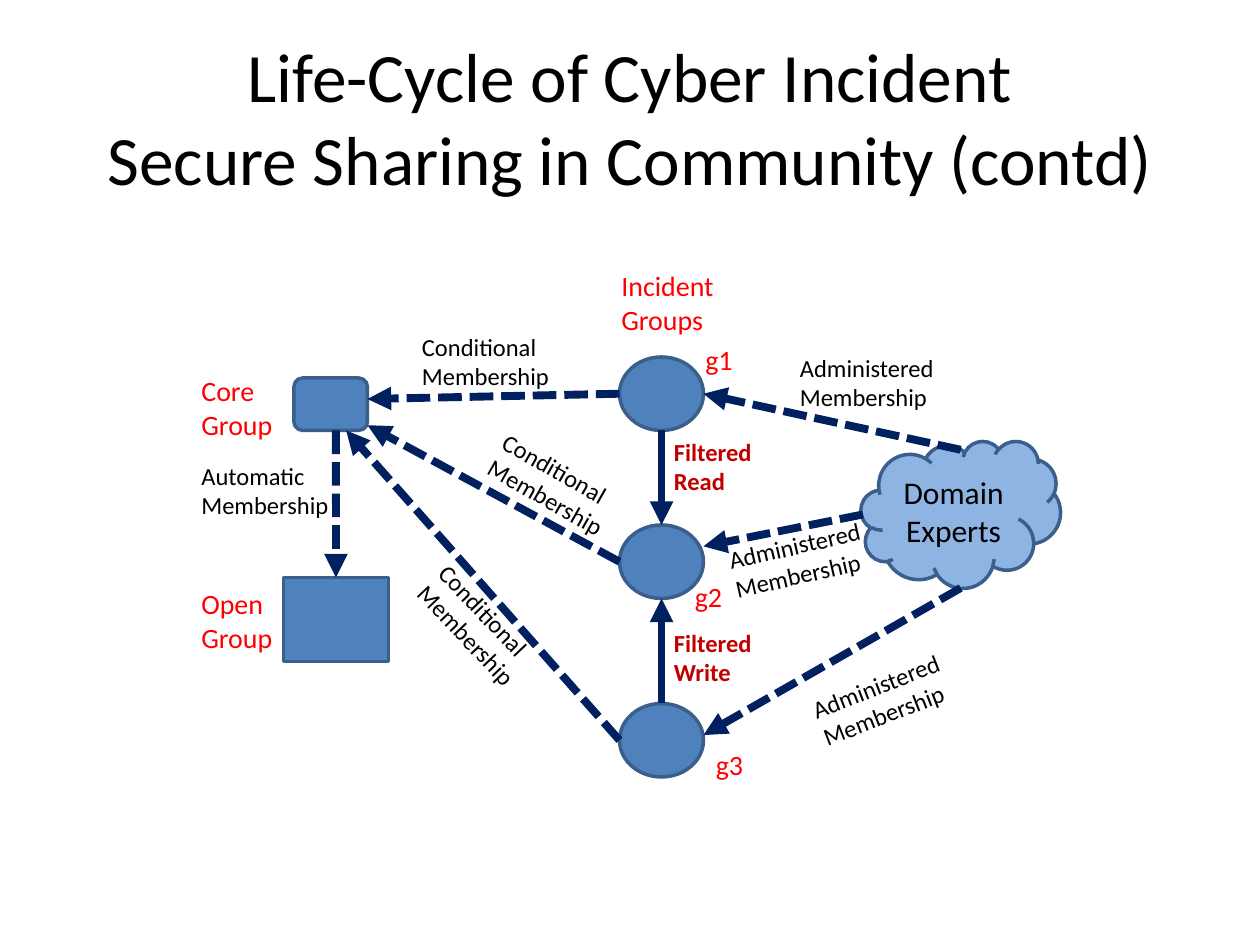
from lxml import etree
from pptx import Presentation
from pptx.dml.color import RGBColor
from pptx.enum.dml import MSO_LINE
from pptx.enum.shapes import MSO_CONNECTOR, MSO_SHAPE
from pptx.enum.text import MSO_ANCHOR, MSO_AUTO_SIZE, PP_ALIGN
from pptx.oxml.ns import qn
from pptx.util import Inches, Pt

RECT, ROUND = MSO_SHAPE.RECTANGLE, MSO_SHAPE.ROUNDED_RECTANGLE
OVAL, CLOUD = MSO_SHAPE.OVAL, MSO_SHAPE.CLOUD
STRAIGHT, DASH = MSO_CONNECTOR.STRAIGHT, MSO_LINE.SQUARE_DOT
CENTER, MIDDLE = PP_ALIGN.CENTER, MSO_ANCHOR.MIDDLE
FIXED = MSO_AUTO_SIZE.NONE

CELL = Inches(1) / 12  # the slide is 120 columns by 90 rows
FONT = "Calibri"
HUES = {"node": "4F81BD", "edge": "3A5F8C", "cloud": "8EB4E3", "arrow": "002060",
        "name": "FF0000", "filter": "C00000", "text": "000000"}


def hue(name):
    return RGBColor.from_string(HUES[name])


def place(box, x, y, w, h):
    """Turn cells counted from the corner of box into slide lengths."""
    return [round(n * CELL) for n in (box[0] + x, box[1] + y, w, h)]


def style(frame, size, color, bold=False, align=None):
    for para in frame.paragraphs:
        para.alignment = align
        for run in para.runs:
            run.font.name, run.font.size = FONT, Pt(size)
            run.font.bold, run.font.color.rgb = bold, hue(color)


def label(slide, box, text, x, y, w, h=6.8, size=14, color="text", bold=False, turn=0):
    area = slide.shapes.add_textbox(*place(box, x, y, w, h))
    area.rotation = turn
    area.text_frame.word_wrap = True
    area.text_frame.text = text
    style(area.text_frame, size, color, bold)


def name(slide, box, text, x, y, w, h=7.7):
    label(slide, box, text, x, y, w, h, 16, "name")


def node(slide, box, kind, x, y, w, h, fill="node"):
    shape = slide.shapes.add_shape(kind, *place(box, x, y, w, h))
    shape.shadow.inherit = False
    shape.fill.solid()
    shape.fill.fore_color.rgb = hue(fill)
    shape.line.color.rgb, shape.line.width = hue("edge"), Pt(2)
    return shape


def point(shape, across, down):
    """Find a point of the shape from shares of its width and height."""
    return (round(shape.left + across * shape.width),
            round(shape.top + down * shape.height))


def arrow(slide, start, end, dashed=True):
    link = slide.shapes.add_connector(STRAIGHT, *point(*start), *point(*end))
    link.line.color.rgb, link.line.width = hue("arrow"), Pt(4.5)
    if dashed:
        link.line.dash_style = DASH
    etree.SubElement(link.line._get_or_add_ln(), qn("a:tailEnd"), type="triangle")
    etree.SubElement(link._element.spPr, qn("a:effectLst"))
    return link


def heading(slide, box):
    title = slide.shapes.title
    title.left, title.top, title.width, title.height = place(box, 0, 0, *box[2:])
    frame = title.text_frame
    frame.text = "Life-Cycle of Cyber Incident\vSecure Sharing in Community (contd)"
    frame.auto_size, frame.vertical_anchor = FIXED, MIDDLE
    style(frame, 39.6, "text", align=CENTER)


def groups(slide, box):
    core = node(slide, box, ROUND, 10, 1, 7, 5)
    public = node(slide, box, RECT, 9, 20, 10, 8)
    name(slide, box, "Core Group", 0, 0, 10)
    name(slide, box, "Open Group", 0, 20.3, 11)
    label(slide, box, "Automatic Membership", 0, 8.3, 17)
    arrow(slide, (core, 0.57, 1), (public, 0.5, 0)).end_connect(public, 0)
    return core


def incidents(slide, box):
    name(slide, box, "Incident Groups", 0, 0, 13)
    rows = [("g1", 9, 8, 7), ("g2", 25, 7, 29.6), ("g3", 42, 9, 45.6)]
    nodes = []
    for text, top, x, y in rows:
        nodes.append(node(slide, box, OVAL, 1, top, 8, 7))
        name(slide, box, text, x, y, 6, 4.4)
    first, second, third = nodes
    arrow(slide, (first, 0.5, 1), (second, 0.5, 0), dashed=False)
    arrow(slide, (third, 0.5, 0), (second, 0.5, 1), dashed=False)
    for text, y, w in [("Filtered\nRead", 16, 19), ("Filtered\nWrite", 34.2, 11)]:
        label(slide, box, text, 5, y, w, color="filter", bold=True)
    return nodes


def experts(slide, box):
    cloud = node(slide, box, CLOUD, 0, 0, *box[2:], fill="cloud")
    frame = cloud.text_frame
    frame.word_wrap, frame.vertical_anchor = True, MIDDLE
    frame.text = "Domain Experts"
    style(frame, 18, "text", align=CENTER)
    return cloud


def members(slide, box, core, nodes, cloud):
    """Link incident groups to the core, and experts to incident groups."""
    for item, spot in zip(nodes, [(1, 0.4), (1, 0.9), (0.71, 1)]):
        arrow(slide, (item, 0, 0.5), (core, *spot))
    ends = [((0.5, 0.06), 0.5), ((0.01, 0.5), 0.29), ((0.5, 1), 0.43)]
    for item, (spot, down) in zip(nodes, ends):
        arrow(slide, (cloud, *spot), (item, 1, down))
    notes = [("Conditional", 21, 6, 15, 0), ("Conditional", 27.4, 17.8, 14.9, 29.6),
             ("Conditional", 20, 31.6, 15.8, 46.5), ("Administered", 57, 8, 17, 0),
             ("Administered", 50.4, 24.7, 17, -12.8),
             ("Administered", 58.3, 37.9, 17, -21.3)]
    for kind, x, y, w, turn in notes:
        label(slide, box, f"{kind} Membership", x, y, w, turn=turn)


def main():
    deck = Presentation()
    deck.slide_width, deck.slide_height = Inches(10), Inches(7.5)
    slide = deck.slides.add_slide(deck.slide_layouts[5])
    heading(slide, (6, 3.6, 108, 15))
    core = groups(slide, (18, 35, 19, 28))
    nodes = incidents(slide, (58, 25, 24, 50))
    cloud = experts(slide, (82, 42, 19, 14))
    members(slide, (18, 25, 83, 50), core, nodes, cloud)
    deck.save("out.pptx")


if __name__ == "__main__":
    main()
